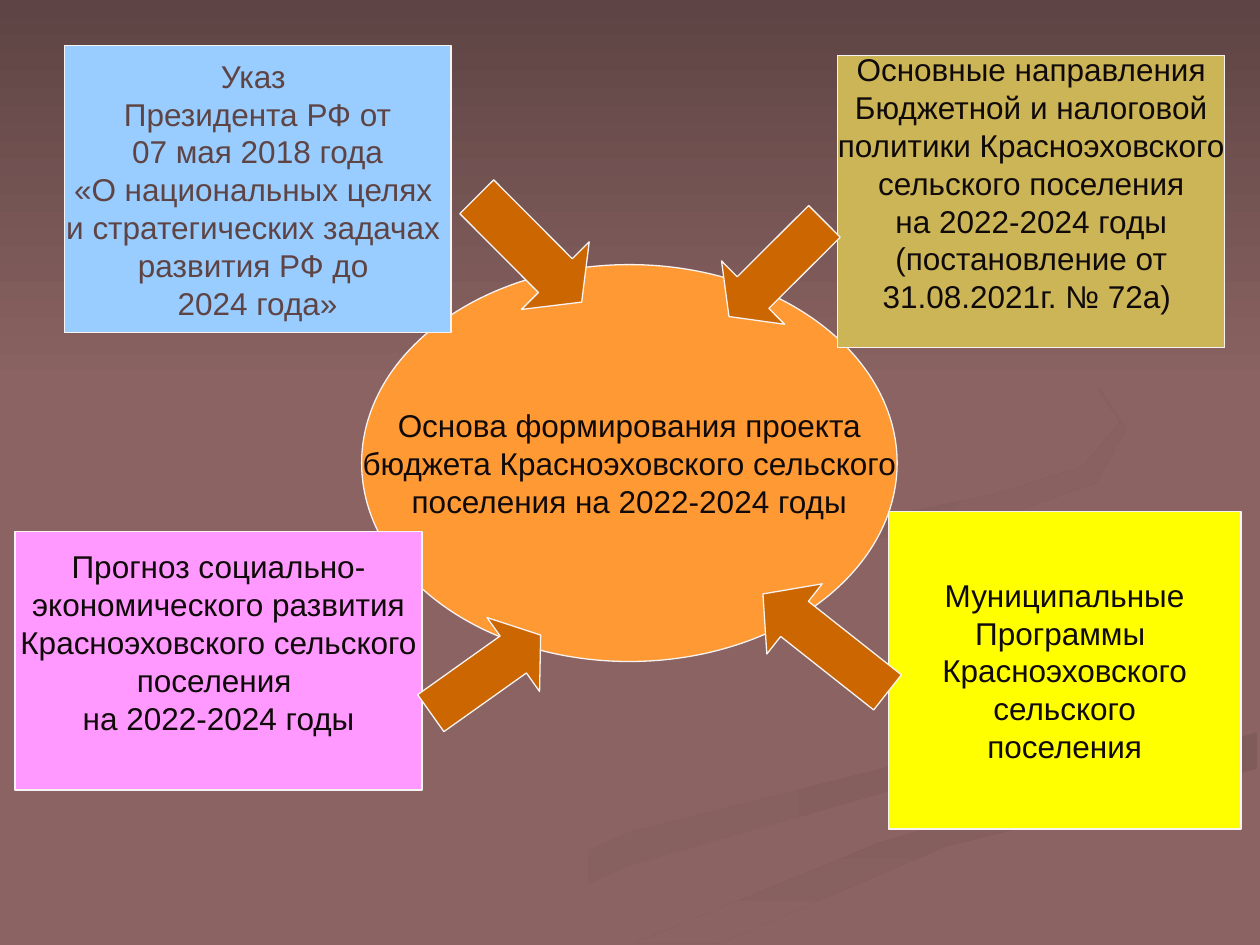
from pptx import Presentation
from pptx.dml.color import RGBColor
from pptx.enum.shapes import MSO_SHAPE
from pptx.enum.text import MSO_ANCHOR, PP_ALIGN
from pptx.util import Inches, Pt

RECTANGLE = MSO_SHAPE.RECTANGLE
PROCESS = MSO_SHAPE.FLOWCHART_PROCESS
ELLIPSE = MSO_SHAPE.OVAL
RIGHT_ARROW = MSO_SHAPE.RIGHT_ARROW
LEFT_ARROW = MSO_SHAPE.LEFT_ARROW
CENTER = PP_ALIGN.CENTER
MIDDLE = MSO_ANCHOR.MIDDLE

COLORS = {
    "ground": "8A6362", "dusk": "5E4444", "outline": "F7F3F3", "ink": "100A0A",
    "band_low": "845F5E", "band_right": "7F5B5A", "curl": "805C5B",
    "orange": "FF9933", "pink": "FF99FF", "blue": "99CCFF",
    "yellow": "FFFF00", "olive": "CBB557", "arrow": "CC6600",
}
BLANK_LINE = 0.3  # height of one 18 pt line, in inches

# Decorative ribbons: outline, first colour, second colour, clockwise angle
RIBBONS = [
    ([(5.75, 4.6), (6.1, 5), (7.4, 5.4), (7.85, 5.7), (7.4, 6), (5, 6.6),
      (3, 7.49), (3.6, 7.49), (5, 6.87), (7.4, 6.18), (8, 5.8), (7.8, 5.53),
      (6.3, 5.05)], "ground", "band_low", 0),
    ([(5.03, 7.49), (5.7, 7.49), (7.5, 6.72), (9.98, 6.1), (9.98, 5.81),
      (7, 6.68)], "band_right", "ground", 90),
    ([(6.2, 5), (5.8, 4.7), (6.2, 4.4), (7.9, 4.12), (8.7, 3.83), (8.94, 3.4),
      (8.6, 2.9), (7.62, 2.33), (8.6, 2.92), (8.89, 3.35), (8.6, 3.7),
      (7.9, 3.92), (6.2, 4.27), (5.77, 4.62)], "curl", "ground", 45),
]

# Sources of the budget: box, fill, text colour, bottom lines left free, lines
SOURCES = [
    ((0.12, 4.22, 3.23, 2.05), "pink", "ink", 1,
     ["Прогноз социально-", "экономического развития",
      "Красноэховского сельского", "поселения ", "на 2022-2024 годы"]),
    ((0.51, 0.36, 3.07, 2.28), "blue", "dusk", 0,
     ["Указ ", "Президента РФ от", "07 мая 2018 года",
      "«О национальных целях ", "и стратегических задачах ",
      "развития РФ до ", "2024 года»"]),
    ((7.05, 4.06, 2.8, 2.52), "yellow", "ink", 0,
     ["Муниципальные", "Программы ", "Красноэховского", "сельского",
      "поселения"]),
    ((6.65, 0.44, 3.07, 2.32), "olive", "ink", 1,
     ["Основные направления", "Бюджетной и налоговой",
      "политики Красноэховского", "сельского поселения",
      "на 2022-2024 годы", "(постановление от", "31.08.2021г. № 72а) "]),
]
BUDGET_BASIS = ["Основа формирования проекта",
                "бюджета Красноэховского сельского",
                "поселения на 2022-2024 годы"]

# Arrows: kind, box, rotation, head length
ARROWS = [
    (RIGHT_ARROW, (3.32, 4.99, 1.07, 0.72), 324.6, 0.37),
    (LEFT_ARROW, (5.92, 4.75, 1.26, 0.71), 38.3, 0.45),
    (RIGHT_ARROW, (3.61, 1.6, 1.18, 0.76), 45.1, 0.39),
    (LEFT_ARROW, (5.63, 1.78, 1.07, 0.71), 315.1, 0.38),
]


def color(name):
    return RGBColor.from_string(COLORS[name])


def paint_backdrop(shape, first, second, angle):
    """Fill with a two-colour gradient at a clockwise angle, without a line."""
    shape.shadow.inherit = False
    shape.line.fill.background()
    shape.fill.gradient()
    shape.fill.gradient_angle = (360 - angle) % 360
    for stop, name in zip(shape.fill.gradient_stops, (first, second)):
        stop.color.rgb = color(name)


def add_ribbon(slide, points, first, second, angle):
    corners = [(Inches(x), Inches(y)) for x, y in points]
    builder = slide.shapes.build_freeform(*corners[0])
    builder.add_line_segments(corners[1:], close=True)
    paint_backdrop(builder.convert_to_shape(), first, second, angle)


def add_outlined(slide, kind, box, fill):
    shape = slide.shapes.add_shape(kind, *map(Inches, box))
    shape.shadow.inherit = False
    shape.fill.solid()
    shape.fill.fore_color.rgb = color(fill)
    shape.line.color.rgb = color("outline")
    shape.line.width = Pt(0.75)
    return shape


def add_labelled(slide, kind, box, fill, ink, free_lines, lines):
    frame = add_outlined(slide, kind, box, fill).text_frame
    frame.word_wrap = False
    frame.vertical_anchor = MIDDLE
    frame.margin_bottom = Inches(0.05 + free_lines * BLANK_LINE)
    frame.text = "\n".join(lines)
    for paragraph in frame.paragraphs:
        paragraph.alignment = CENTER
        font = paragraph.runs[0].font
        font.name = "Arial"
        font.size = Pt(18)
        font.color.rgb = color(ink)


def add_arrow(slide, kind, box, rotation, head):
    arrow = add_outlined(slide, kind, box, "arrow")
    arrow.adjustments[0] = 0.5
    arrow.adjustments[1] = head
    arrow.rotation = rotation


def main():
    deck = Presentation()
    deck.slide_width, deck.slide_height = Inches(10), Inches(7.5)
    slide = deck.slides.add_slide(deck.slide_layouts[6])

    # Backdrop
    slide.background.fill.solid()
    slide.background.fill.fore_color.rgb = color("ground")
    for ribbon in RIBBONS:
        add_ribbon(slide, *ribbon)
    sky = slide.shapes.add_shape(RECTANGLE, 0, 0, Inches(10), Inches(3.08))
    paint_backdrop(sky, "dusk", "ground", 90)

    # Centre, its sources and the arrows between them
    add_labelled(slide, ELLIPSE, (2.87, 2.1, 4.25, 3.15), "orange", "ink", 0,
                 BUDGET_BASIS)
    for source in SOURCES:
        add_labelled(slide, PROCESS, *source)
    for arrow in ARROWS:
        add_arrow(slide, *arrow)

    deck.save("out.pptx")


if __name__ == "__main__":
    main()
